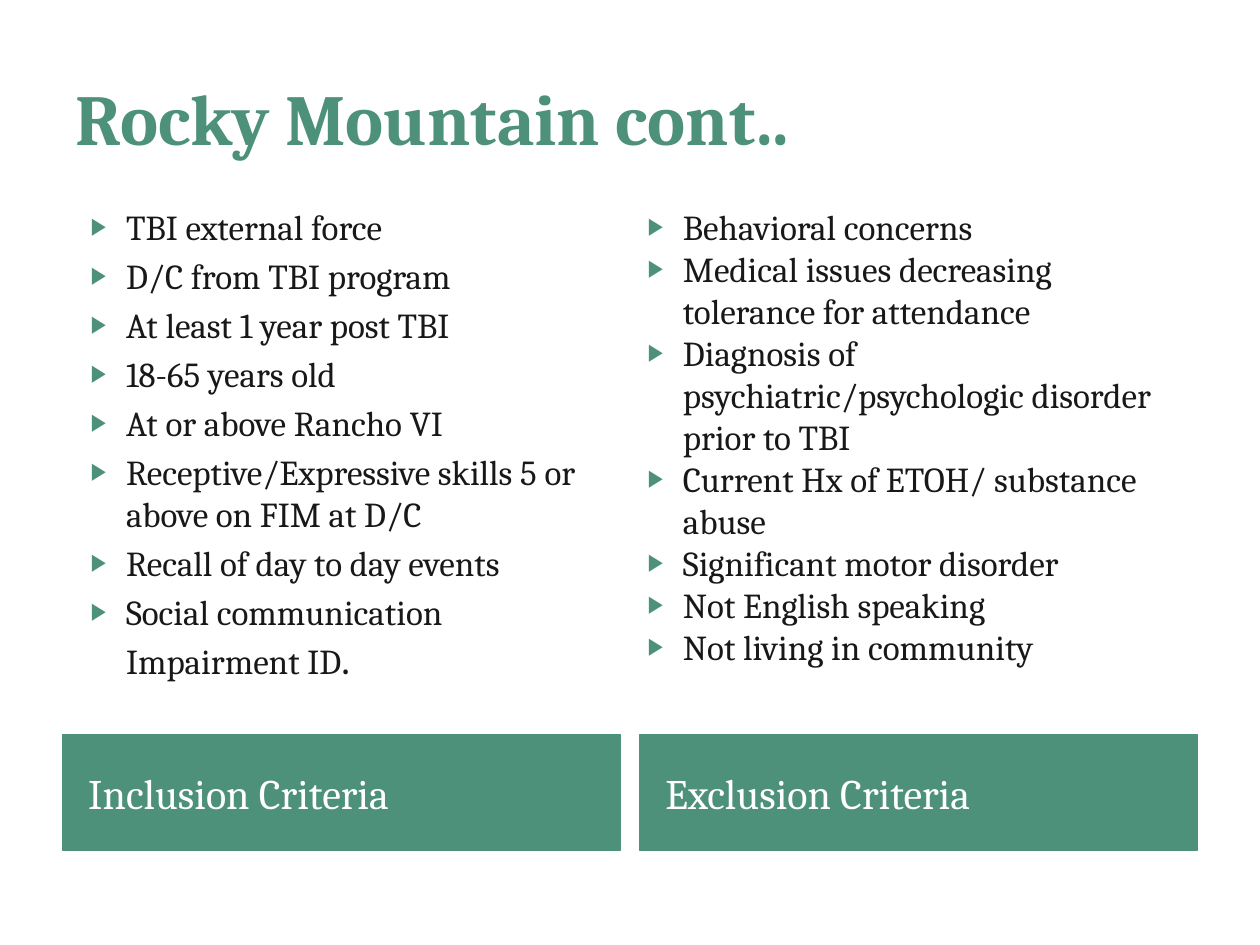
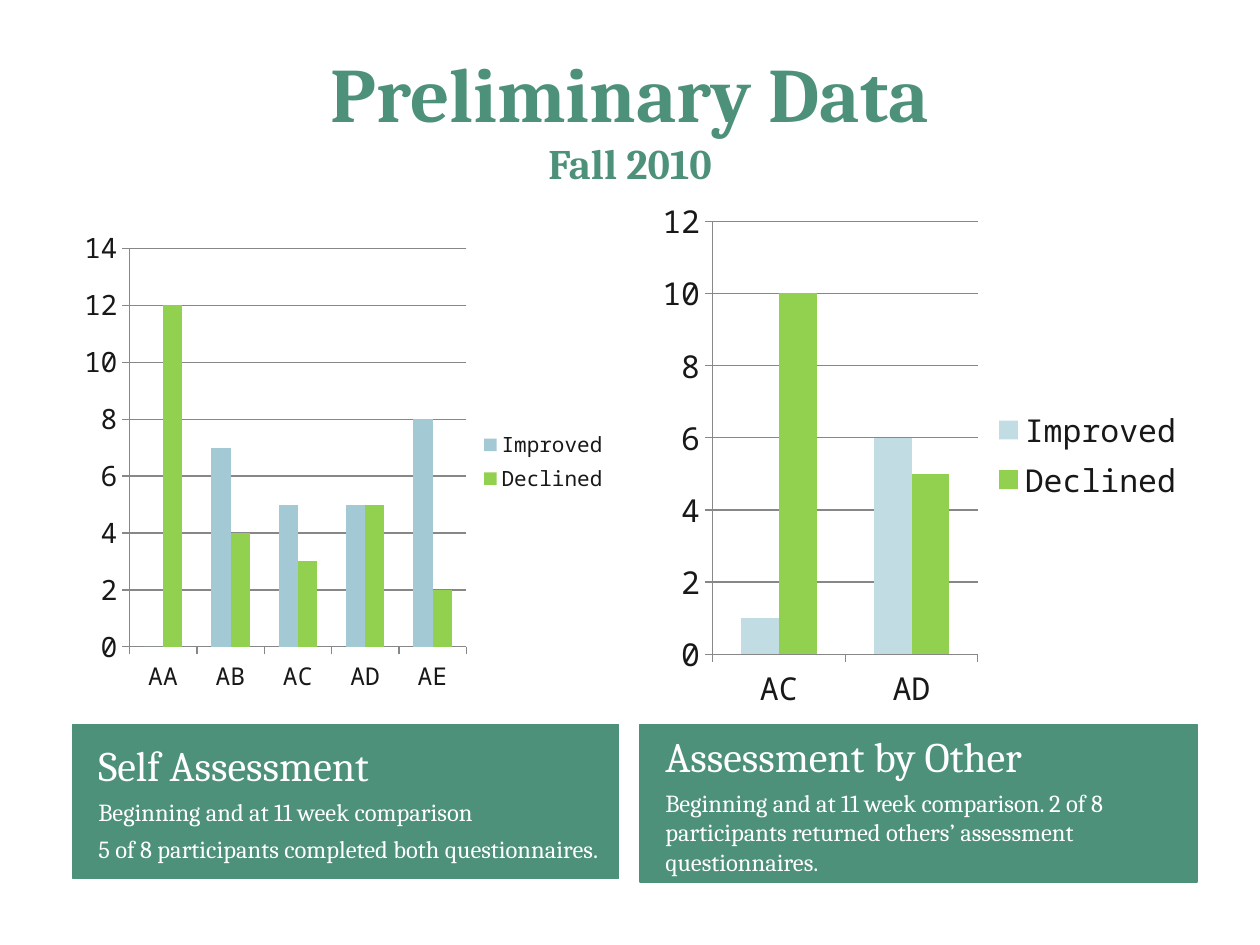
from lxml.etree import SubElement
from pptx import Presentation
from pptx.chart.data import CategoryChartData
from pptx.dml.color import RGBColor
from pptx.enum.chart import XL_CHART_TYPE, XL_LEGEND_POSITION, XL_TICK_MARK
from pptx.enum.text import MSO_ANCHOR, MSO_AUTO_SIZE, PP_ALIGN
from pptx.oxml.ns import qn
from pptx.util import Inches, Pt

COLORS = {
    "green": "4D917B",
    "ink": "181818",
    "white": "FFFFFF",
    "grid": "878787",
    "blue": "A3CAD4",
    "pale_blue": "C2DCE3",
    "lime": "92D050",
}
FONT, CHART_FONT = "Cambria", "Noto Sans Mono"
TITLE, LEFT_CAPTION, LEFT_BODY, RIGHT_CAPTION, RIGHT_BODY = range(5)


def rgb(name):
    return RGBColor.from_string(COLORS[name])


def style(font, size, color, bold=False, name=FONT):
    font.size, font.bold, font.name = Pt(size), bold, name
    font.color.rgb = rgb(color)


def place(s, idx, box, anchor):
    """Move a placeholder and return its text frame."""
    sp = s.placeholders[idx]
    sp.left, sp.top, sp.width, sp.height = map(Inches, box)
    tf = sp.text_frame
    tf.word_wrap = True
    tf.auto_size = MSO_AUTO_SIZE.NONE
    tf.vertical_anchor = anchor
    return sp, tf


def add_title(s, text, sizes, align):
    _, tf = place(s, TITLE, (0.5, 0.3, 9, 1.25), MSO_ANCHOR.MIDDLE)
    tf.text = text
    p = tf.paragraphs[0]
    p.alignment = align
    for r, size in zip(p.runs, sizes):
        style(r.font, size, "green", bold=True)


def add_caption(s, idx, box, heading, *details):
    """Green band with a heading and optional smaller lines."""
    sp, tf = place(s, idx, box, MSO_ANCHOR.MIDDLE)
    sp.fill.solid()
    sp.fill.fore_color.rgb = rgb("green")
    sp.line.color.rgb = rgb("green")
    sp.line.width = Pt(0.75)
    tf.margin_left = Inches(0.2)
    tf.text = "\n".join((heading, *details))
    for i, p in enumerate(tf.paragraphs):
        p.space_before = Pt(4 if i else 0)
        style(p.runs[0].font, 14 if i else 24, "white")


def add_bullet(p):
    pPr = p._p.get_or_add_pPr()
    pPr.set("marL", str(Inches(0.4)))
    pPr.set("indent", str(Inches(-0.28)))
    color = SubElement(pPr, qn("a:buClr"))
    SubElement(color, qn("a:srgbClr"), val=COLORS["green"])
    SubElement(pPr, qn("a:buSzPct"), val="68000")
    SubElement(pPr, qn("a:buChar"), char="▶")


def add_list(s, idx, box, items, gap):
    _, tf = place(s, idx, box, MSO_ANCHOR.TOP)
    tf.text = "\n".join(items)
    for i, p in enumerate(tf.paragraphs):
        add_bullet(p)
        p.space_before = Pt(gap if i else 0)
        style(p.runs[0].font, 20, "ink")
    return tf


def add_column_chart(s, idx, box, cats, series, top, cat_size, val_size, legend_size):
    """Clustered columns in place of a content placeholder."""
    sp = s.placeholders[idx]
    sp.element.getparent().remove(sp.element)
    data = CategoryChartData()
    data.categories = cats
    for name, values, _ in series:
        data.add_series(name, values)
    chart = s.shapes.add_chart(
        XL_CHART_TYPE.COLUMN_CLUSTERED, *map(Inches, box), data).chart
    style(chart.font, 18, "ink", name=CHART_FONT)
    chart.has_title = False

    chart.has_legend = True
    chart.legend.position = XL_LEGEND_POSITION.RIGHT
    chart.legend.include_in_layout = False
    style(chart.legend.font, legend_size, "ink", name=CHART_FONT)

    plot = chart.plots[0]
    plot.vary_by_categories = False
    plot.gap_width, plot.overlap = 150, 0
    for ser, (_, _, color) in zip(plot.series, series):
        ser.format.fill.solid()
        ser.format.fill.fore_color.rgb = rgb(color)

    cat, val = chart.category_axis, chart.value_axis
    val.minimum_scale, val.maximum_scale, val.major_unit = 0, top, 2
    val.has_major_gridlines = True
    for axis, size in ((cat, cat_size), (val, val_size)):
        axis.major_tick_mark = XL_TICK_MARK.OUTSIDE
        style(axis.tick_labels.font, size, "ink", name=CHART_FONT)
    for part in (cat, val, val.major_gridlines):
        part.format.line.color.rgb = rgb("grid")
        part.format.line.width = Pt(0.75)


def criteria_slide(prs):
    s = prs.slides.add_slide(prs.slide_layouts.get_by_name("Comparison"))
    add_title(s, "Rocky Mountain cont..", [41], PP_ALIGN.LEFT)
    add_caption(s, LEFT_CAPTION, (0.5, 5.83, 4.42, 0.92), "Inclusion Criteria")
    add_caption(s, RIGHT_CAPTION, (5.08, 5.83, 4.42, 0.92), "Exclusion Criteria")
    tf = add_list(s, LEFT_BODY, (0.5, 1.58, 4.42, 4.75), [
        "TBI external force",
        "D/C from TBI program",
        "At least 1 year post TBI",
        "18-65 years old",
        "At or above Rancho VI",
        "Receptive/Expressive skills 5 or above on FIM at D/C",
        "Recall of day to day events",
        "Social communication Impairment ID",
    ], gap=4)
    # Larger closing full stop
    r = tf.paragraphs[-1].add_run()
    r.text = "."
    style(r.font, 24, "ink")
    add_list(s, RIGHT_BODY, (4.92, 1.58, 4.58, 4.67), [
        "Behavioral concerns",
        "Medical issues decreasing tolerance for attendance",
        "Diagnosis of psychiatric/psychologic disorder prior to TBI",
        "Current Hx of ETOH/ substance abuse",
        "Significant motor disorder",
        "Not English speaking",
        "Not living in community",
    ], gap=0)


def data_slide(prs):
    s = prs.slides.add_slide(prs.slide_layouts.get_by_name("Comparison"))
    add_title(s, "Preliminary Data\vFall 2010", [44, 24], PP_ALIGN.CENTER)
    add_caption(s, LEFT_CAPTION, (0.58, 5.75, 4.33, 1.22), "Self Assessment",
                "Beginning and at 11 week comparison",
                "5 of 8 participants completed both questionnaires.")
    add_caption(s, RIGHT_CAPTION, (5.08, 5.75, 4.42, 1.25), "Assessment by Other",
                "Beginning and at 11 week comparison. 2 of 8 participants "
                "returned others’ assessment questionnaires.")
    add_column_chart(s, LEFT_BODY, (0.58, 1.75, 4.34, 3.83),
                     ["AA", "AB", "AC", "AD", "AE"],
                     [("Improved", [0, 7, 5, 5, 8], "blue"),
                      ("Declined", [12, 4, 3, 5, 2], "lime")],
                     top=14, cat_size=14, val_size=16, legend_size=12)
    add_column_chart(s, RIGHT_BODY, (5.17, 1.5, 4.33, 4.22),
                     ["AC", "AD"],
                     [("Improved", [1, 6], "pale_blue"),
                      ("Declined", [10, 5], "lime")],
                     top=12, cat_size=18, val_size=18, legend_size=18)


def main():
    prs = Presentation()
    prs.slide_width, prs.slide_height = Inches(10), Inches(7.5)
    criteria_slide(prs)
    data_slide(prs)
    prs.save("out.pptx")


if __name__ == "__main__":
    main()
